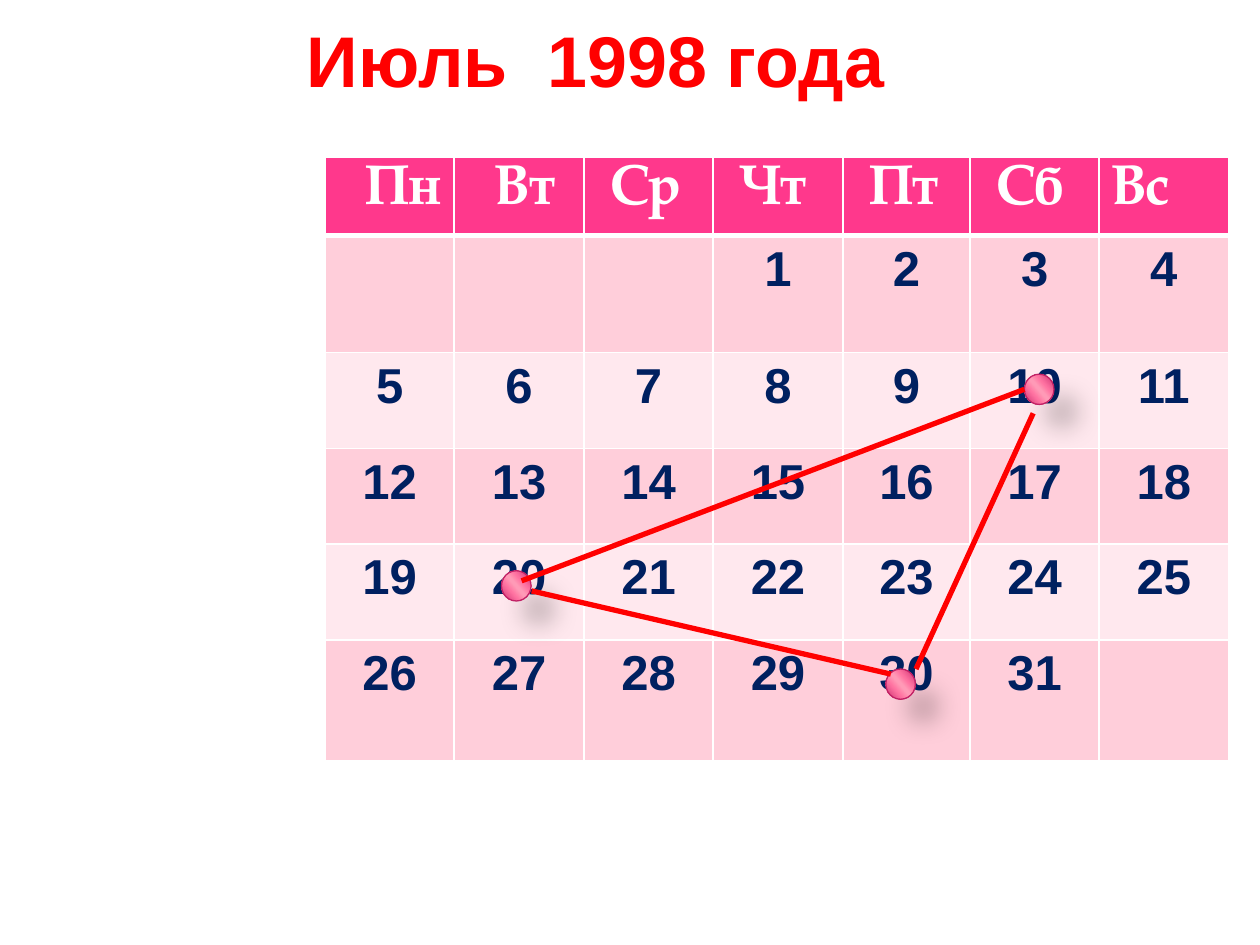
from itertools import product

from lxml.etree import SubElement
from pptx import Presentation
from pptx.dml.color import RGBColor
from pptx.enum.shapes import MSO_CONNECTOR, MSO_SHAPE
from pptx.enum.text import MSO_ANCHOR, PP_ALIGN
from pptx.oxml import parse_xml
from pptx.oxml.ns import nsdecls, qn
from pptx.util import Inches, Pt

RED = RGBColor(0xFF, 0x00, 0x00)
WHITE = RGBColor(0xFF, 0xFF, 0xFF)
NAVY = RGBColor(0x00, 0x20, 0x60)
HEADER_PINK = RGBColor(0xFF, 0x38, 0x8C)
MID_PINK = RGBColor(0xFF, 0xCE, 0xDA)
PALE_PINK = RGBColor(0xFF, 0xE8, 0xEE)
DOT_EDGE = RGBColor(0xC1, 0x21, 0x65)
DOT_DARK = RGBColor(0xCC, 0x2D, 0x70)
DOT_MID = RGBColor(0xFF, 0x73, 0xA2)
DOT_LIGHT = RGBColor(0xFF, 0x9A, 0xB7)
BLACK = RGBColor(0x00, 0x00, 0x00)

DOT_STOPS = [(0, DOT_DARK), (33, DOT_MID), (47, DOT_LIGHT),
             (53, DOT_LIGHT), (68, DOT_MID), (100, DOT_DARK)]
TITLE_FONT = {"name": "Arial", "size": Pt(41), "bold": True, "color": RED}
HEADER_FONT = {"name": "TeX Gyre Pagella", "size": Pt(32), "bold": True, "color": WHITE}
DAY_FONT = {"name": "Arial", "size": Pt(28), "bold": True, "color": NAVY}

WEEKDAYS = ["Пн", "Вт", "Ср", "Чт", "Пт", "Сб", "Вс"]
HEADER_INDENTS = [3.2, 3.2, 2.1, 2.1, 2.1, 2.1, 1]
FIRST_WEEKDAY = 3
LAST_DAY = 31
COLUMN_WIDTHS = [10.25, 10.3, 10.25, 10.3, 10.1, 10.25, 10.25]
ROW_HEIGHTS = [6.2, 9.3, 7.6, 7.6, 7.6, 9.6]


class CalendarSlide:
    """Holds the style and the slide; lengths are in a grid of 100 columns by 75 rows."""

    def __init__(self, presentation):
        self.column = presentation.slide_width / 100
        self.row = presentation.slide_height / 75
        self.slide = presentation.slides.add_slide(presentation.slide_layouts[5])

    def place(self, left, top, width, height):
        return (round(left * self.column), round(top * self.row),
                round(width * self.column), round(height * self.row))

    def add_text(self, frame, text, font_format, alignment):
        paragraph = frame.paragraphs[0]
        paragraph.alignment = alignment
        run = paragraph.add_run()
        run.text = text
        for name, value in font_format.items():
            if name == "color":
                run.font.color.rgb = value
            else:
                setattr(run.font, name, value)

    def title(self, text, *box):
        shape = self.slide.shapes.title
        shape.left, shape.top, shape.width, shape.height = self.place(*box)
        shape.text_frame.vertical_anchor = MSO_ANCHOR.MIDDLE
        self.add_text(shape.text_frame, text, TITLE_FONT, PP_ALIGN.CENTER)

    def border(self, cell, widths):
        properties = cell._tc.get_or_add_tcPr()
        for side, width in zip("LRTB", widths):
            line = SubElement(properties, qn(f"a:ln{side}"), w=str(int(Pt(width))))
            fill = SubElement(line, qn("a:solidFill"))
            SubElement(fill, qn("a:srgbClr"), val=str(WHITE))

    def calendar(self, left, top):
        box = self.place(left, top, sum(COLUMN_WIDTHS), sum(ROW_HEIGHTS))
        table = self.slide.shapes.add_table(
            len(ROW_HEIGHTS), len(COLUMN_WIDTHS), *box).table
        for column, width in zip(table.columns, COLUMN_WIDTHS):
            column.width = round(width * self.column)
        for row, height in zip(table.rows, ROW_HEIGHTS):
            row.height = round(height * self.row)

        for week, weekday in product(range(len(ROW_HEIGHTS)), range(len(WEEKDAYS))):
            cell = table.cell(week, weekday)
            self.border(cell, (1, 1, 3 if week == 1 else 1, 3 if week == 0 else 1))
            cell.fill.solid()
            if week == 0:
                cell.fill.fore_color.rgb = HEADER_PINK
                cell.margin_left = round(HEADER_INDENTS[weekday] * self.column)
                cell.margin_right = 0
                self.add_text(cell.text_frame, WEEKDAYS[weekday], HEADER_FONT, PP_ALIGN.LEFT)
                continue
            cell.fill.fore_color.rgb = MID_PINK if week % 2 else PALE_PINK
            day = (week - 1) * len(WEEKDAYS) + weekday - FIRST_WEEKDAY + 1
            if 1 <= day <= LAST_DAY:
                self.add_text(cell.text_frame, str(day), DAY_FONT, PP_ALIGN.CENTER)

    def dot(self, left, top):
        shape = self.slide.shapes.add_shape(
            MSO_SHAPE.FLOWCHART_CONNECTOR, *self.place(left, top, 2.35, 2.4))
        properties = shape._element.spPr
        stops = "".join(f'<a:gs pos="{share * 1000}"><a:srgbClr val="{color}"/></a:gs>'
                        for share, color in DOT_STOPS)
        properties.insert(2, parse_xml(
            f'<a:gradFill {nsdecls("a")}><a:gsLst>{stops}</a:gsLst>'
            f'<a:lin ang="{139 * 60000}" scaled="0"/></a:gradFill>'))
        shape.line.color.rgb = DOT_EDGE
        shape.line.width = Pt(0.75)
        properties.append(parse_xml(
            f'<a:effectLst {nsdecls("a")}><a:outerShdw blurRad="{int(Pt(15))}" '
            f'dist="{int(Pt(18))}" dir="{45 * 60000}" algn="tl" rotWithShape="0">'
            f'<a:srgbClr val="{BLACK}"><a:alpha val="26000"/></a:srgbClr>'
            '</a:outerShdw></a:effectLst>'))

    def line(self, start, end):
        connector = self.slide.shapes.add_connector(
            MSO_CONNECTOR.STRAIGHT, *self.place(*start, *end))
        connector.line.color.rgb = RED
        connector.line.width = Pt(3)
        SubElement(connector._element.spPr, qn("a:effectLst"))


def main():
    presentation = Presentation()
    presentation.slide_width = Inches(10)
    presentation.slide_height = Inches(7.5)
    page = CalendarSlide(presentation)

    # Month and its calendar
    page.title("Июль  1998 года", 2.3, 0, 90, 9.4)
    page.calendar(25.8, 12.5)

    # Marked days: 20, 10 and 30
    for left, top in [(39.8, 45.3), (81.3, 29.7), (70.3, 53.1)]:
        page.dot(left, top)

    # Triangle joining the marked days
    for start, end in [((42.2, 46.9), (70.7, 53.5)),
                       ((72.7, 53.1), (82, 32.8)),
                       ((41.4, 46.1), (81.3, 30.9))]:
        page.line(start, end)

    presentation.save("out.pptx")


if __name__ == "__main__":
    main()
